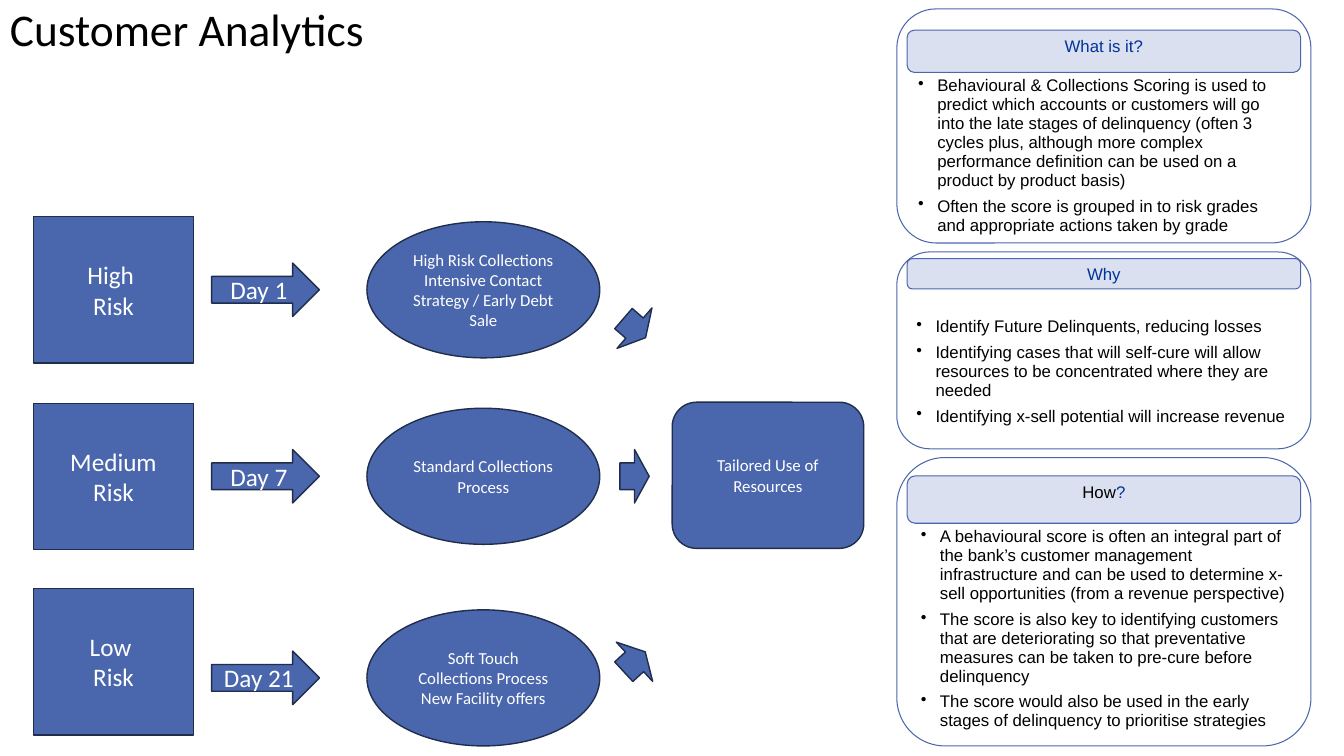
from pptx import Presentation
from pptx.dml.color import RGBColor
from pptx.enum.shapes import MSO_SHAPE
from pptx.enum.text import MSO_ANCHOR, PP_ALIGN
from pptx.util import Pt
from lxml import etree

COLOURS = {"blue": "4A66AC", "edge": "202D4B", "pale": "DAE0EF",
           "heading": "003399", "black": "000000", "white": "FFFFFF"}

TITLE = "Customer Analytics"
RESULT = "Tailored Use of Resources"

# Risk lines, risk centre, day, action lines, action centre, merge centre, merge turn
ROWS = [
    (["High ", "Risk"], 207, "Day 1",
     ["High Risk Collections", "Intensive Contact Strategy / Early Debt Sale"],
     207, 234.4, 40.8),
    (["Medium", "Risk"], 340.2, "Day 7",
     ["Standard Collections Process"], 340.2, 340.2, 0),
    (["Low ", "Risk"], 472.7, "Day 21",
     ["Soft Touch Collections Process", "New Facility offers"],
     484.2, 472.7, 317.2),
]

# Card top and height, heading top and height, heading runs, bullets
CARDS = [
    (6.4, 167.2, 21.6, 30.1, [("What is it?", "heading")], [
        "Behavioural & Collections Scoring is used to predict which accounts or customers "
        "will go into the late stages of delinquency (often 3 cycles plus, although more "
        "complex performance definition can be used on a product by product basis)",
        "Often the score is grouped in to risk grades and appropriate actions taken by grade",
    ]),
    (180, 140.6, 184.8, 21.6, [("Why", "heading")], [
        "Identify Future Delinquents, reducing losses",
        "Identifying cases that will self-cure will allow resources to be concentrated "
        "where they are needed",
        "Identifying x-sell potential will increase revenue",
    ]),
    (326.8, 206, 340, 33.8, [("How", "black"), ("?", "heading")], [
        "A behavioural score is often an integral part of the bank’s customer management "
        "infrastructure and can be used to determine x-sell opportunities "
        "(from a revenue perspective)",
        "The score is also key to identifying customers that are deteriorating so that "
        "preventative measures can be taken to pre-cure before delinquency",
        "The score would also be used in the early stages of delinquency to "
        "prioritise strategies",
    ]),
]
CARD_LEFT, CARD_WIDTH = 640.6, 295.8
HEADING_LEFT, HEADING_WIDTH = 648, 281
INDENT = 13.7


def colour(name):
    return RGBColor.from_string(COLOURS[name])


def set_font(font, size, family, name):
    font.size = Pt(size)
    font.name = family
    font.color.rgb = colour(name)


def add_shape(slide, kind, left, top, width, height, fill, line, line_width):
    shape = slide.shapes.add_shape(kind, Pt(left), Pt(top), Pt(width), Pt(height))
    shape.shadow.inherit = False
    if fill:
        shape.fill.solid()
        shape.fill.fore_color.rgb = colour(fill)
    else:
        shape.fill.background()
    shape.line.color.rgb = colour(line)
    shape.line.width = Pt(line_width)
    return shape


def write_lines(frame, lines):
    """Put one paragraph per line in the frame and return the paragraphs."""
    frame.word_wrap = True
    frame.text = "\n".join(lines)
    return frame.paragraphs


def add_flow_shape(slide, kind, left, centre, width, height, lines=(), size=12):
    """Add a dark blue shape, placed by its vertical centre."""
    shape = add_shape(slide, kind, left, centre - height / 2, width, height,
                      "blue", "edge", 1)
    if lines:
        shape.text_frame.vertical_anchor = MSO_ANCHOR.MIDDLE
        for paragraph in write_lines(shape.text_frame, lines):
            paragraph.alignment = PP_ALIGN.CENTER
            set_font(paragraph.font, size, "Calibri", "white")
    return shape


def space_card_paragraph(paragraph):
    paragraph.line_spacing = 0.94
    paragraph.space_before = paragraph.space_after = Pt(2.4)


def add_bullet(paragraph):
    properties = paragraph._p.get_or_add_pPr()
    properties.set("marL", str(Pt(INDENT)))
    properties.set("indent", str(-Pt(INDENT)))
    namespace = properties.nsmap["a"]
    bullet = etree.Element(f"{{{namespace}}}buChar", char="•")
    font = properties.find(f"{{{namespace}}}defRPr")
    if font is None:
        properties.append(bullet)
    else:
        font.addprevious(bullet)


def add_card(slide, top, height, heading_top, heading_height, heading_runs, bullets):
    card = add_shape(slide, MSO_SHAPE.ROUNDED_RECTANGLE, CARD_LEFT, top,
                     CARD_WIDTH, height, None, "blue", 0.75)
    card.text_frame.vertical_anchor = MSO_ANCHOR.TOP
    card.text_frame.margin_top = Pt(40)
    for paragraph in write_lines(card.text_frame, bullets):
        paragraph.alignment = PP_ALIGN.LEFT
        space_card_paragraph(paragraph)
        set_font(paragraph.font, 12, "Arial", "black")
        add_bullet(paragraph)

    heading = add_shape(slide, MSO_SHAPE.ROUNDED_RECTANGLE, HEADING_LEFT, heading_top,
                        HEADING_WIDTH, heading_height, "pale", "blue", 0.75)
    heading.text_frame.word_wrap = True
    heading.text_frame.vertical_anchor = MSO_ANCHOR.TOP
    paragraph = heading.text_frame.paragraphs[0]
    paragraph.alignment = PP_ALIGN.CENTER
    space_card_paragraph(paragraph)
    for words, name in heading_runs:
        run = paragraph.add_run()
        run.text = words
        set_font(run.font, 12, "Arial", name)


def main():
    presentation = Presentation()
    presentation.slide_width, presentation.slide_height = Pt(960), Pt(540)
    slide = presentation.slides.add_slide(presentation.slide_layouts[6])

    title = slide.shapes.add_textbox(Pt(0), Pt(3.6), Pt(828), Pt(38.2))
    title.text_frame.vertical_anchor = MSO_ANCHOR.MIDDLE
    paragraph = write_lines(title.text_frame, [TITLE])[0]
    paragraph.line_spacing = 0.9
    set_font(paragraph.font, 32.4, "Calibri", "black")

    for risk, risk_centre, day, action, action_centre, merge_centre, turn in ROWS:
        add_flow_shape(slide, MSO_SHAPE.RECTANGLE, 23.8, risk_centre, 114.5, 104.4, risk, 18)
        add_flow_shape(slide, MSO_SHAPE.RIGHT_ARROW, 151.2, action_centre, 77, 38.2, [day], 18)
        add_flow_shape(slide, MSO_SHAPE.OVAL, 262.1, action_centre, 166.3, 97.2, action)
        merge = add_flow_shape(slide, MSO_SHAPE.RIGHT_ARROW, 442.8, merge_centre, 20.9, 38.2)
        merge.rotation = turn
    add_flow_shape(slide, MSO_SHAPE.ROUNDED_RECTANGLE, 480.2, 339.5, 136.8, 104.4, [RESULT])

    for card in CARDS:
        add_card(slide, *card)

    presentation.save("out.pptx")


if __name__ == "__main__":
    main()
